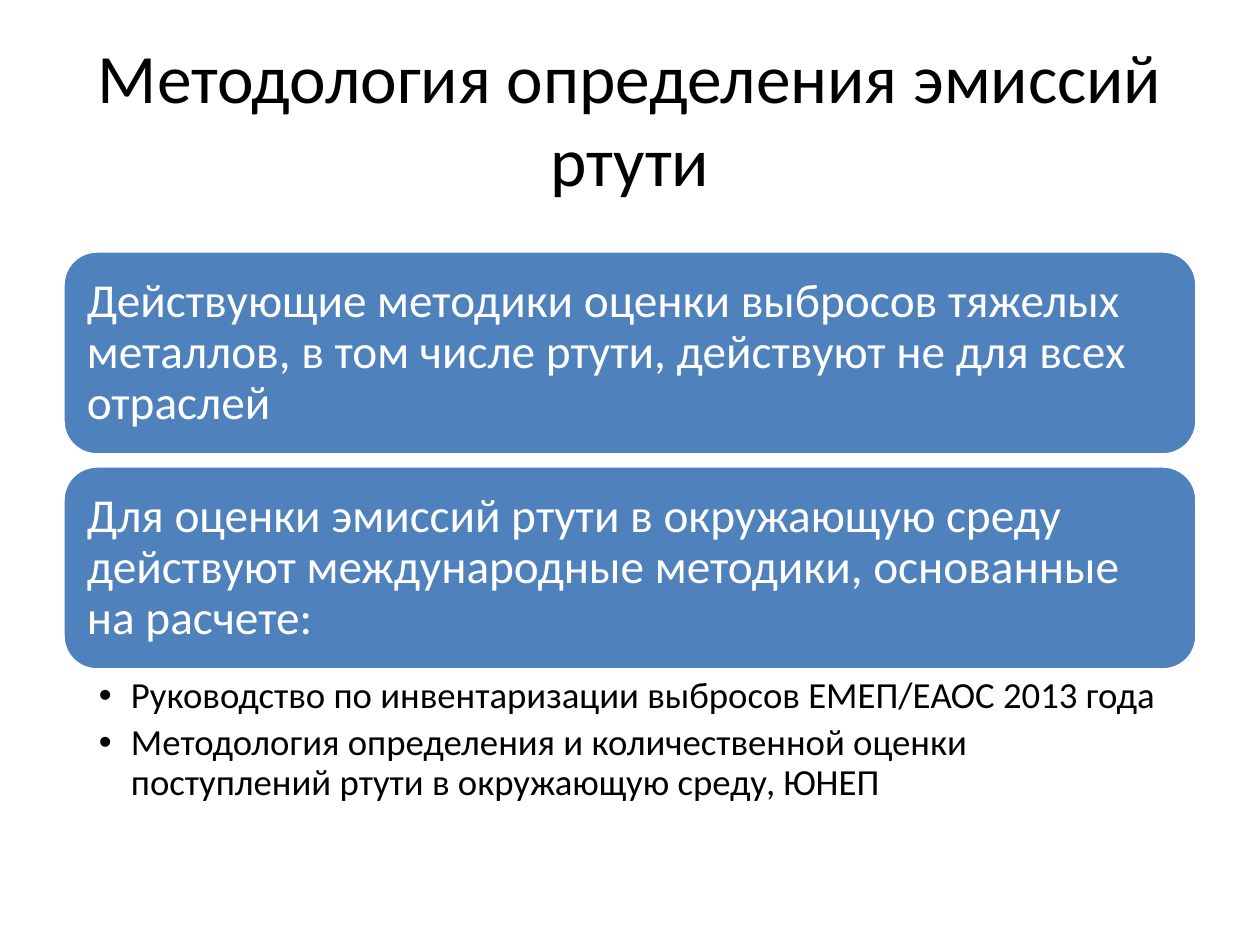
from dataclasses import dataclass

from lxml.etree import SubElement
from pptx import Presentation
from pptx.dml.color import RGBColor
from pptx.enum.shapes import MSO_SHAPE
from pptx.enum.text import MSO_ANCHOR, PP_ALIGN
from pptx.oxml.ns import qn
from pptx.util import Emu, Pt

PX_PER_INCH = 126
FONT = "Calibri"
BLACK = RGBColor(0x00, 0x00, 0x00)
WHITE = RGBColor(0xFF, 0xFF, 0xFF)
BLUE = RGBColor(0x4F, 0x81, 0xBD)

LEFT, WIDTH = 63, 1134
PANEL_TOP, PANEL_HEIGHT, PANEL_PITCH = 251, 204, 215
BULLET_INDENT = 32


@dataclass(frozen=True)
class Band:
    """A full-width strip of the slide, in px."""
    top: int
    height: int


TITLE = "Методология определения эмиссий ртути"
STATEMENTS = [
    "Действующие методики оценки выбросов тяжелых металлов, "
    "в том числе ртути, действуют не для всех отраслей",
    "Для оценки эмиссий ртути в окружающую среду действуют "
    "международные методики, основанные на расчете:",
]
METHODS = [
    "Руководство по инвентаризации выбросов ЕМЕП/ЕАОС 2013 года",
    "Методология определения и количественной оценки поступлений "
    "ртути в окружающую среду, ЮНЕП",
]


def px(length: int) -> Emu:
    return Emu(round(length * 914400 / PX_PER_INCH))


def bounds(band: Band) -> tuple:
    return px(LEFT), px(band.top), px(WIDTH), px(band.height)


def add_bullet(paragraph) -> None:
    properties = paragraph._p.get_or_add_pPr()
    properties.set("marL", str(px(BULLET_INDENT)))
    properties.set("indent", str(-px(BULLET_INDENT)))
    SubElement(properties, qn("a:buFont"), typeface="Arial")
    SubElement(properties, qn("a:buChar"), char="•")


def write_text(shape, lines: list[str], *, size: float, color: RGBColor,
               insets: tuple[int, int, int, int],
               align=PP_ALIGN.LEFT, anchor=MSO_ANCHOR.MIDDLE,
               line_spacing: float = 0.9, space_after: float = 0,
               bulleted: bool = False) -> None:
    frame = shape.text_frame
    frame.word_wrap = True
    frame.vertical_anchor = anchor
    (frame.margin_left, frame.margin_top,
     frame.margin_right, frame.margin_bottom) = map(px, insets)
    for index, line in enumerate(lines):
        paragraph = frame.add_paragraph() if index else frame.paragraphs[0]
        paragraph.alignment = align
        paragraph.line_spacing = line_spacing
        paragraph.space_after = Pt(space_after)
        if bulleted:
            add_bullet(paragraph)
        run = paragraph.add_run()
        run.text = line
        run.font.name = FONT
        run.font.size = Pt(size)
        run.font.color.rgb = color


def add_panel(slide, band: Band, statement: str) -> None:
    panel = slide.shapes.add_shape(MSO_SHAPE.ROUNDED_RECTANGLE, *bounds(band))
    panel.shadow.inherit = False
    panel.fill.solid()
    panel.fill.fore_color.rgb = BLUE
    panel.line.color.rgb = WHITE
    panel.line.width = Pt(2)
    write_text(panel, [statement], size=27, color=WHITE,
               insets=(14, 14, 14, 14))


def main() -> None:
    presentation = Presentation()
    presentation.slide_width = px(1260)
    presentation.slide_height = px(945)
    slide = presentation.slides.add_slide(presentation.slide_layouts[6])

    # Title
    title = slide.shapes.add_textbox(*bounds(Band(38, 158)))
    write_text(title, [TITLE], size=39.6, color=BLACK, insets=(13, 6, 13, 6),
               align=PP_ALIGN.CENTER, line_spacing=1.0)

    # Statement panels
    for row, statement in enumerate(STATEMENTS):
        band = Band(PANEL_TOP + row * PANEL_PITCH, PANEL_HEIGHT)
        add_panel(slide, band, statement)

    # International methods under the last panel
    methods = slide.shapes.add_textbox(*bounds(Band(672, 142)))
    write_text(methods, METHODS, size=21, color=BLACK, insets=(36, 5, 26, 5),
               anchor=MSO_ANCHOR.TOP, space_after=4.2, bulleted=True)

    presentation.save("out.pptx")


if __name__ == "__main__":
    main()
